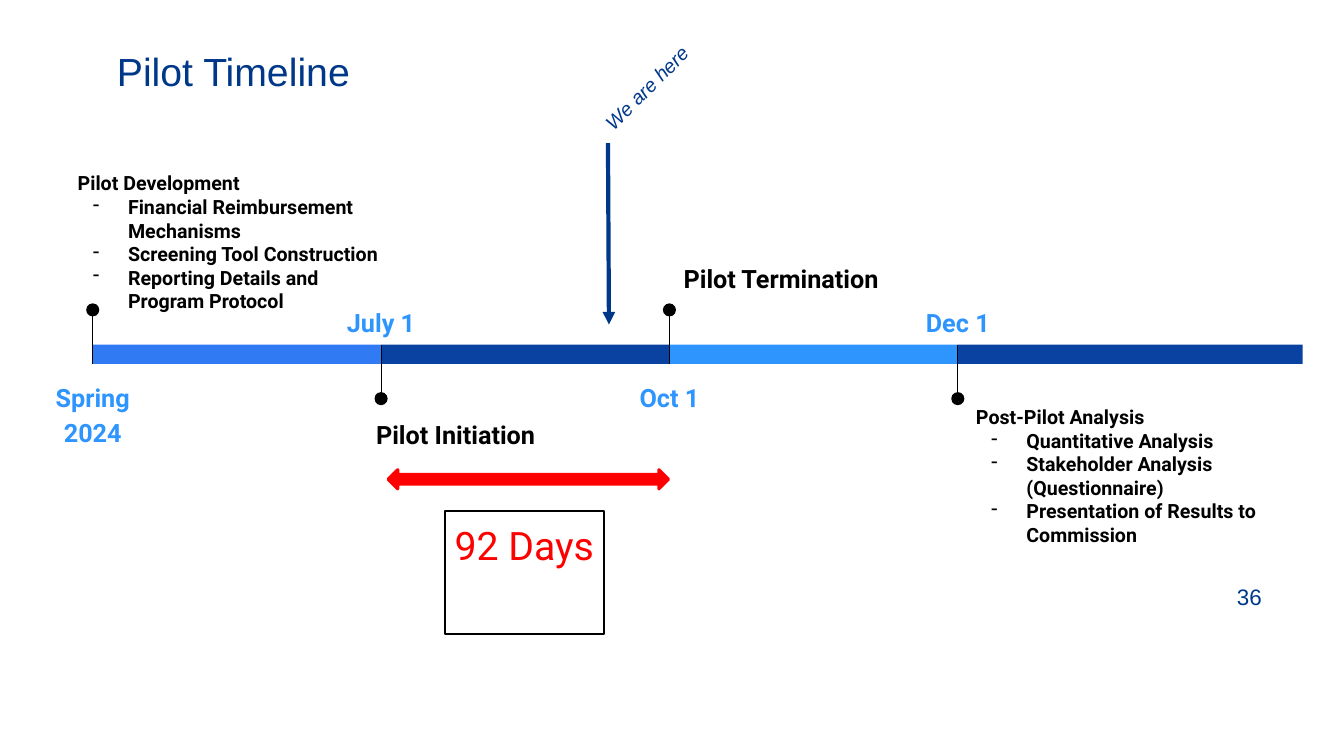
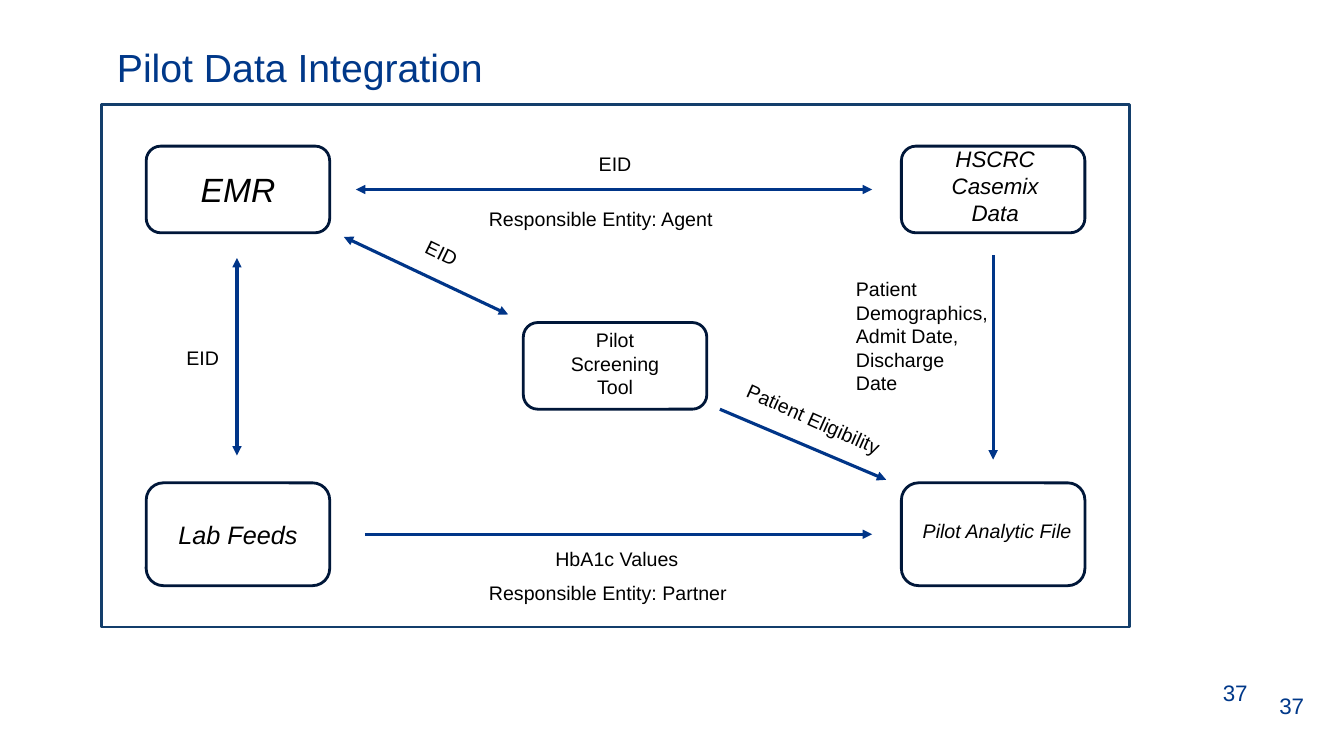
from pptx import Presentation
from pptx.dml.color import RGBColor
from pptx.enum.shapes import MSO_CONNECTOR, MSO_SHAPE
from pptx.enum.text import MSO_ANCHOR, MSO_AUTO_SIZE, PP_ALIGN
from pptx.oxml.ns import qn
from pptx.util import Inches, Pt
from lxml.etree import SubElement

# Shared look
NAVY, BLACK, RED = "003889", "000000", "FF0000"
SKY, MID, DEEP = "2E95FF", "307AF3", "0942A1"
FRAME, EDGE, WIRE = "133E6B", "001739", "003588"
LEFT, CENTER = PP_ALIGN.LEFT, PP_ALIGN.CENTER
TOP, MIDDLE = MSO_ANCHOR.TOP, MSO_ANCHOR.MIDDLE
SLIM = (0.1, 0.05, 0.1, 0.05)
EVEN = (0.1,) * 4
WIDE = (0.13,) * 4


def add(slide, at, kind=None, fill=None, edge=None, width=1):
    """Add a preset shape, or a text box when no kind is given."""
    box = [Inches(v) for v in at]
    if kind is None:
        return slide.shapes.add_textbox(*box)
    shape = slide.shapes.add_shape(kind, *box)
    shape.shadow.inherit = False
    if fill:
        shape.fill.solid()
        shape.fill.fore_color.rgb = RGBColor.from_string(fill)
    else:
        shape.fill.background()
    if edge:
        shape.line.color.rgb = RGBColor.from_string(edge)
        shape.line.width = Pt(width)
    else:
        shape.line.fill.background()
    return shape


def write(shape, text, size=14, color=BLACK, font="Arial", bold=False,
          italic=False, align=LEFT, anchor=TOP, pad=SLIM, space=1.0):
    """Fill a shape with text; lines after the first are dash bullets."""
    frame = shape.text_frame
    frame.text = text
    frame.word_wrap = True
    frame.auto_size = MSO_AUTO_SIZE.NONE
    frame.vertical_anchor = anchor
    (frame.margin_left, frame.margin_top,
     frame.margin_right, frame.margin_bottom) = [Inches(v) for v in pad]
    for i, para in enumerate(frame.paragraphs):
        para.alignment = align
        para.line_spacing = space
        if i:
            props = para._p.get_or_add_pPr()
            props.set("marL", str(Inches(0.5)))
            props.set("indent", str(Inches(-0.35)))
            tint = SubElement(props, qn("a:buClr"))
            SubElement(tint, qn("a:srgbClr")).set("val", BLACK)
            SubElement(props, qn("a:buChar")).set("char", "-")
        for run in para.runs:
            run.font.name = font
            run.font.size = Pt(size)
            run.font.bold = bold
            run.font.italic = italic
            run.font.color.rgb = RGBColor.from_string(color)


deck = Presentation()
deck.slide_width, deck.slide_height = Inches(13.33), Inches(7.5)

# Slides with titles and page numbers
pages = []
for title, top, number, spots in [
    ("Pilot Timeline", 0.42, "36", [(12.17, 5.72)]),
    ("Pilot Data Integration", 0.38, "37", [(12.59, 6.8), (12.03, 6.67)]),
]:
    slide = deck.slides.add_slide(deck.slide_layouts[5])
    head = slide.shapes.title
    head.left, head.top = Inches(1.06), Inches(top)
    head.width, head.height = Inches(11.5), Inches(0.66)
    write(head, title, 28, NAVY)
    for x, y in spots:
        write(add(slide, (x, y, 0.63, 0.4)), number, 16, NAVY, anchor=MIDDLE)
    pages.append(slide)
time, flow = pages

# Timeline: bars, pins and dates, with pins up and down in turn
lines = []
START, STEP, BAR, DOT = 0.92, 2.86, 3.42, 0.13
for i, (date, color) in enumerate([
    ("Spring 2024", MID), ("July 1", DEEP), ("Oct 1", SKY), ("Dec 1", DEEP),
]):
    x = START + i * STEP
    up = i % 2 == 0
    wide = 3.42 if i == 3 else STEP
    add(time, (x, BAR, wide, 0.19), MSO_SHAPE.RECTANGLE, color)
    add(time, (x - DOT / 2, 3.01 if up else 3.89, DOT, DOT),
        MSO_SHAPE.OVAL, BLACK)
    ends = (3.09, 3.61) if up else (3.95, BAR)
    lines.append((time, x, ends[0], x, ends[1], BLACK, 0.75, ""))
    write(add(time, (x - 0.55, 3.62 if up else 2.87, 1.1, 0.54)), date, 18,
          SKY, "Roboto", True, align=CENTER, pad=WIDE, space=1.15)

# Timeline: phases
for at, size, text in [
    ((0.64, 1.57, 3.29, 1.82), 14,
     "Pilot Development\nFinancial Reimbursement Mechanisms\n"
     "Screening Tool Construction\nReporting Details and Program Protocol"),
    ((3.6, 4.03, 3.29, 0.6), 18, "Pilot Initiation"),
    ((6.65, 2.48, 2.29, 0.6), 18, "Pilot Termination"),
    ((9.55, 3.89, 3.79, 1.38), 14,
     "Post-Pilot Analysis\nQuantitative Analysis\n"
     "Stakeholder Analysis (Questionnaire)\n"
     "Presentation of Results to Commission"),
]:
    write(add(time, at), text, size, BLACK, "Roboto", True, pad=WIDE)

# Timeline: duration and current position
add(time, (3.85, 4.66, 2.78, 0.19), MSO_SHAPE.LEFT_RIGHT_ARROW, RED, RED, 2.25)
span = add(time, (4.41, 5.07, 1.58, 1.22), MSO_SHAPE.RECTANGLE,
           edge=BLACK, width=1.5)
write(span, "92 Days", 28, RED, "Roboto", align=CENTER,
      pad=(0.05, 0.1, 0.05, 0.1))
here = add(time, (5.64, 0.51, 1.75, 0.24))
here.rotation = 315
write(here, "We are here", 14, NAVY, italic=True, pad=EVEN)
lines.append((time, 6.03, 1.42, 6.04, 3.22, NAVY, 3, "tail"))

# Data flow: frame and systems
add(flow, (1.01, 1.04, 10.19, 5.18), MSO_SHAPE.RECTANGLE, edge=FRAME, width=2)
for x, y, high, text, size, italic, pad in [
    (1.45, 1.45, 0.86, "EMR", 24, True, SLIM),
    (1.45, 4.79, 1.02, "Lab Feeds", 18, True, SLIM),
    (8.94, 1.45, 0.86, "HSCRC Casemix Data", 16, True,
     (0.2, 0.05, 0.16, 0.13)),
    (8.94, 4.79, 1.02, "Pilot Analytic File", 14, True,
     (0.15, 0.05, 0.07, 0.13)),
    (5.19, 3.2, 0.86, "Pilot Screening Tool", 14, False,
     (0.3, 0.05, 0.3, 0.1)),
]:
    box = add(flow, (x, y, 1.82, high), MSO_SHAPE.ROUNDED_RECTANGLE,
              edge=EDGE, width=2)
    write(box, text, size, italic=italic, align=CENTER, anchor=MIDDLE, pad=pad)

# Data flow: labels
for x, y, wide, high, turn, text in [
    (1.75, 3.38, 0.53, 0.34, 0, "EID"),
    (5.84, 1.46, 0.53, 0.34, 0, "EID"),
    (4.12, 2.34, 0.53, 0.34, 25.9, "EID"),
    (7.26, 3.99, 1.62, 0.34, 24.1, "Patient Eligibility"),
    (8.39, 2.7, 1.52, 1.28, 0,
     "Patient Demographics, Admit Date, Discharge Date"),
    (4.75, 2, 2.54, 0.34, 0, "Responsible Entity: Agent"),
    (5.41, 5.38, 1.44, 0.34, 0, "HbA1c Values"),
    (4.75, 5.71, 2.71, 0.34, 0, "Responsible Entity: Partner"),
]:
    label = add(flow, (x, y, wide, high))
    label.rotation = turn
    write(label, text)

# Data flow: arrows
for x1, y1, x2, y2, tips in [
    (3.53, 1.88, 8.65, 1.88, "head tail"),
    (2.35, 2.56, 2.35, 4.52, "head tail"),
    (3.41, 2.35, 5.04, 3.12, "head tail"),
    (3.62, 5.3, 8.65, 5.3, "tail"),
    (9.85, 2.53, 9.85, 4.56, "tail"),
    (7.14, 4.06, 8.79, 4.76, "tail"),
]:
    lines.append((flow, x1, y1, x2, y2, WIRE, 2.25, tips))

# Pins and arrows of both slides
for slide, x1, y1, x2, y2, color, width, tips in lines:
    link = slide.shapes.add_connector(
        MSO_CONNECTOR.STRAIGHT, Inches(x1), Inches(y1), Inches(x2), Inches(y2))
    link.line.color.rgb = RGBColor.from_string(color)
    link.line.width = Pt(width)
    for tip in tips.split():
        SubElement(link.line._get_or_add_ln(),
                   qn(f"a:{tip}End")).set("type", "triangle")
    SubElement(link._element.spPr, qn("a:effectLst"))

deck.save("out.pptx")
